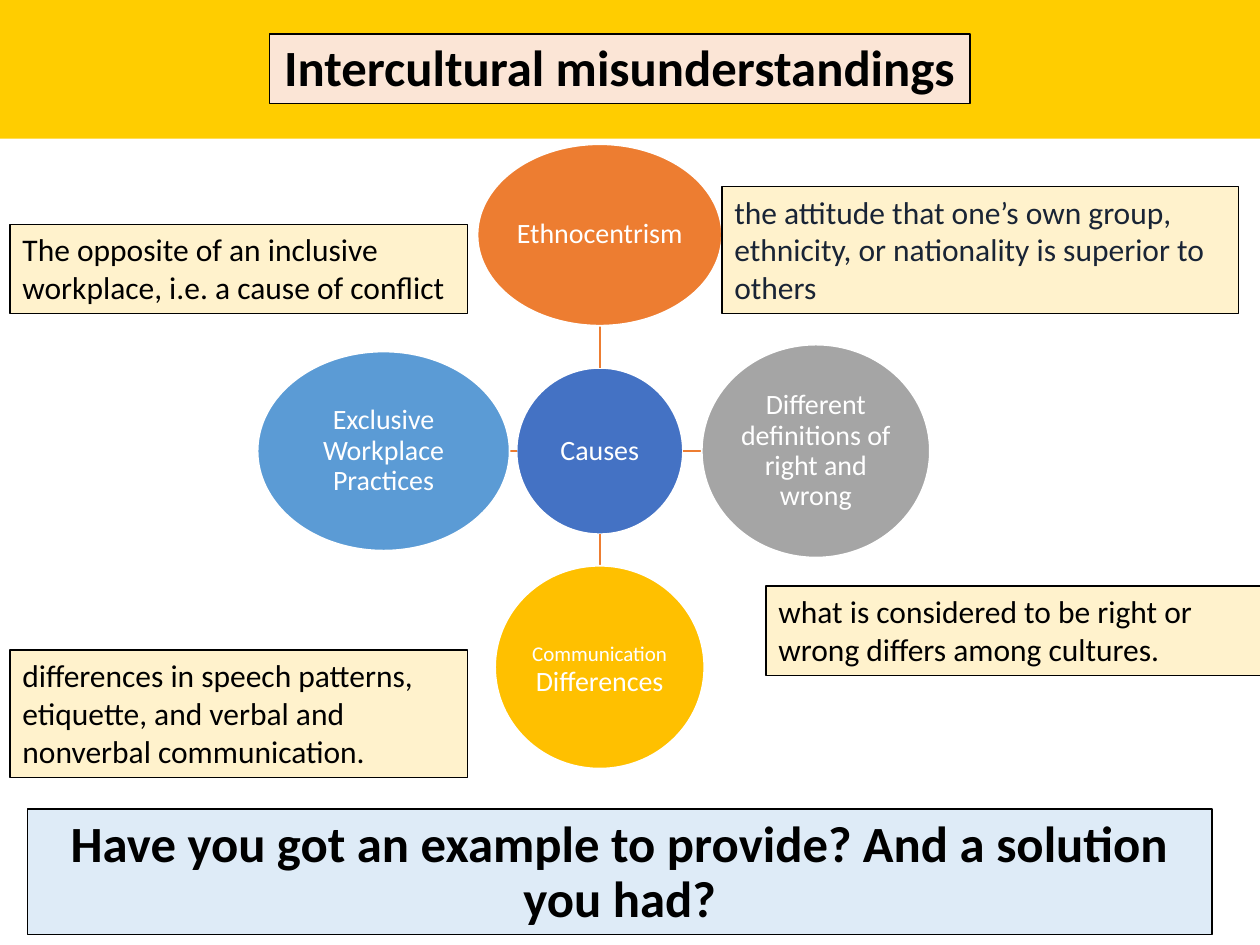
from pptx import Presentation
from pptx.dml.color import RGBColor
from pptx.enum.shapes import MSO_CONNECTOR, MSO_SHAPE
from pptx.enum.text import MSO_ANCHOR, PP_ALIGN
from pptx.oxml.ns import qn
from pptx.util import Inches, Pt

RECT, OVAL = MSO_SHAPE.RECTANGLE, MSO_SHAPE.OVAL
TOP, MIDDLE, BOTTOM = MSO_ANCHOR.TOP, MSO_ANCHOR.MIDDLE, MSO_ANCHOR.BOTTOM
LEFT, CENTER = PP_ALIGN.LEFT, PP_ALIGN.CENTER

BLACK = RGBColor(0x00, 0x00, 0x00)
WHITE = RGBColor(0xFF, 0xFF, 0xFF)
NAVY = RGBColor(0x19, 0x24, 0x35)
BAND = RGBColor(0xFF, 0xCD, 0x00)
PEACH = RGBColor(0xFB, 0xE5, 0xD6)
PALE_BLUE = RGBColor(0xDE, 0xEB, 0xF7)
CREAM = RGBColor(0xFF, 0xF2, 0xCC)
BLUE = RGBColor(0x44, 0x72, 0xC4)
ORANGE = RGBColor(0xED, 0x7D, 0x31)
GRAY = RGBColor(0xA5, 0xA5, 0xA5)
GOLD = RGBColor(0xFF, 0xC0, 0x00)
SKY = RGBColor(0x5B, 0x9B, 0xD5)

# Headings: text, box, fill
HEADINGS = [
    ("Intercultural misunderstandings", (2.14, 0.27, 5.56, 0.55), PEACH),
    ("Have you got an example to provide? And a solution you had?",
     (0.22, 6.42, 9.4, 1), PALE_BLUE),
]

# Notes: text, box, text colour
NOTES = [
    ("the attitude that one’s own group, ethnicity, or nationality is superior to others",
     (5.73, 1.48, 4.1, 1.01), NAVY),
    ("what is considered to be right or wrong differs among cultures.",
     (6.08, 4.65, 4.1, 0.71), BLACK),
    ("differences in speech patterns, etiquette, and verbal and nonverbal communication.",
     (0.08, 5.16, 3.63, 1.01), BLACK),
    ("The opposite of an inclusive workplace, i.e. a cause of conflict",
     (0.08, 1.78, 3.63, 0.71), BLACK),
]

# Radial diagram: hub, and causes as (runs, direction, width, height, fill)
HUB_X, HUB_Y, HUB_SIZE, REACH = 4.76, 3.58, 1.32, 1.715
CAUSES = [
    ([("Ethnocentrism", 16)], (0, -1), 1.94, 1.44, ORANGE),
    ([("Different definitions of right and wrong", 16)], (1, 0), 1.81, 1.69, GRAY),
    ([("Communication", 12), (" Differences", 16)], (0, 1), 1.66, 1.61, GOLD),
    ([("Exclusive Workplace Practices", 16)], (-1, 0), 2, 1.58, SKY),
]

prs = Presentation()
prs.slide_width, prs.slide_height = Inches(10), Inches(7.5)
s = prs.slides.add_slide(prs.slide_layouts[6])


def add_box(kind, box, fill, line=None, width=0.75):
    sp = s.shapes.add_shape(kind, *map(Inches, box))
    sp.shadow.inherit = False
    sp.fill.solid()
    sp.fill.fore_color.rgb = fill
    if line is None:
        sp.line.fill.background()
    else:
        sp.line.color.rgb = line
        sp.line.width = Pt(width)
    return sp


def set_text(sp, runs, color=BLACK, bold=False, align=CENTER, anchor=MIDDLE,
             spacing=0.9, inset=None):
    tf = sp.text_frame
    tf.word_wrap = True
    tf.vertical_anchor = anchor
    if inset is not None:
        tf.margin_left = tf.margin_right = Inches(inset)
        tf.margin_top = tf.margin_bottom = Inches(inset)
    p = tf.paragraphs[0]
    p.alignment = align
    p.line_spacing = spacing
    for text, size in runs:
        r = p.add_run()
        r.text = text
        r.font.name = "Calibri"
        r.font.size = Pt(size)
        r.font.bold = bold
        r.font.color.rgb = color


def add_bubble(runs, cx, cy, w, h, fill):
    sp = add_box(OVAL, (cx - w / 2, cy - h / 2, w, h), fill, WHITE, 1)
    set_text(sp, runs, color=WHITE, inset=0.01)


def add_spoke(x1, y1, x2, y2):
    c = s.shapes.add_connector(MSO_CONNECTOR.STRAIGHT,
                               *map(Inches, (x1, y1, x2, y2)))
    c.line.color.rgb = ORANGE
    c.line.width = Pt(1)
    sppr = c._element.spPr
    sppr.append(sppr.makeelement(qn("a:effectLst"), {}))


# Top band and title
add_box(RECT, (0, 0, 10, 1.1), BAND)

# Hub, spokes and causes
add_bubble([("Causes", 16)], HUB_X, HUB_Y, HUB_SIZE, HUB_SIZE, BLUE)
for runs, (dx, dy), w, h, fill in CAUSES:
    inner = HUB_SIZE / 2
    outer = REACH - (w if dx else h) / 2
    add_spoke(HUB_X + dx * inner, HUB_Y + dy * inner,
              HUB_X + dx * outer, HUB_Y + dy * outer)
    add_bubble(runs, HUB_X + dx * REACH, HUB_Y + dy * REACH, w, h, fill)

# Title and closing question
for text, box, fill in HEADINGS:
    sp = add_box(RECT, box, fill, BLACK)
    set_text(sp, [(text, 29)], bold=True, anchor=BOTTOM)

# Explanatory notes
for text, box, color in NOTES:
    sp = add_box(RECT, box, CREAM, BLACK)
    set_text(sp, [(text, 18)], color=color, align=LEFT, anchor=TOP, spacing=1.0)

prs.save("out.pptx")
